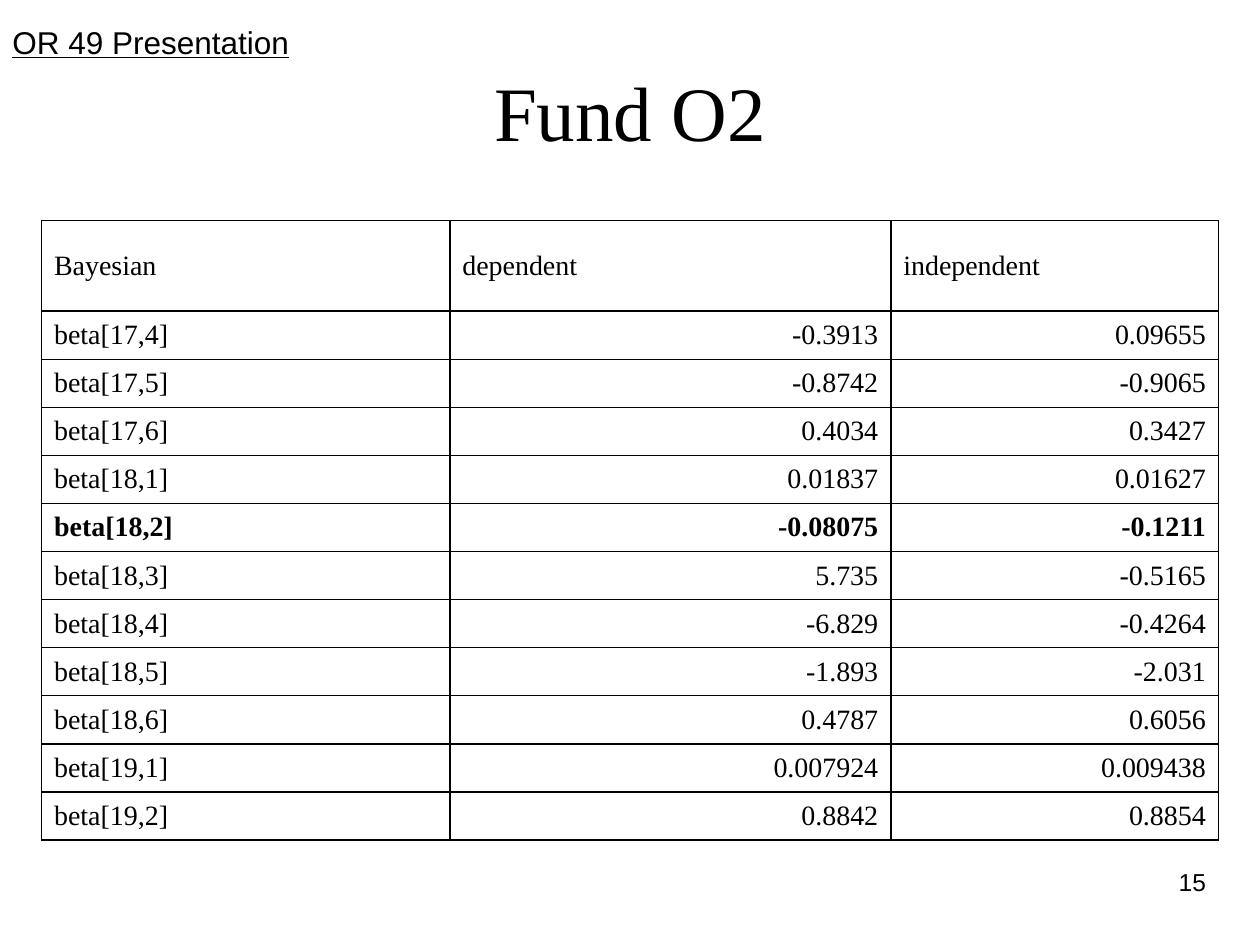
from dataclasses import dataclass

from lxml import etree
from pptx import Presentation
from pptx.dml.color import RGBColor
from pptx.enum.text import MSO_ANCHOR, PP_ALIGN
from pptx.oxml.ns import qn
from pptx.util import Inches, Pt

LEFT, CENTER, RIGHT = PP_ALIGN.LEFT, PP_ALIGN.CENTER, PP_ALIGN.RIGHT
TOP, MIDDLE = MSO_ANCHOR.TOP, MSO_ANCHOR.MIDDLE
TITLE_ONLY = 5


@dataclass(frozen=True)
class Theme:
    ink: str = "000000"
    paper: str = "FFFFFF"
    serif: str = "Times New Roman"
    sans: str = "Arial"
    title_size: int = 44
    label_size: int = 18
    table_size: int = 16
    number_size: int = 14
    border_width: float = 1


HEADINGS = ("Bayesian", "dependent", "independent")
ESTIMATES = (
    ("beta[17,4]", "-0.3913", "0.09655"),
    ("beta[17,5]", "-0.8742", "-0.9065"),
    ("beta[17,6]", "0.4034", "0.3427"),
    ("beta[18,1]", "0.01837", "0.01627"),
    ("beta[18,2]", "-0.08075", "-0.1211"),
    ("beta[18,3]", "5.735", "-0.5165"),
    ("beta[18,4]", "-6.829", "-0.4264"),
    ("beta[18,5]", "-1.893", "-2.031"),
    ("beta[18,6]", "0.4787", "0.6056"),
    ("beta[19,1]", "0.007924", "0.009438"),
    ("beta[19,2]", "0.8842", "0.8854"),
)
HIGHLIGHTED = "beta[18,2]"
COLUMN_WIDTHS = (3.24, 3.5, 2.6)
TABLE_HEIGHT = 4.92
HEADING_HEIGHT = 0.72
HANGING_INDENT = 0.38


class SlideBuilder:
    def __init__(self, presentation, theme):
        self.theme = theme
        self.slide = presentation.slides.add_slide(presentation.slide_layouts[TITLE_ONLY])
        fill = self.slide.background.fill
        fill.solid()
        fill.fore_color.rgb = RGBColor.from_string(theme.paper)

    def fill_paragraph(self, text_frame, text, alignment, **font_format):
        paragraph = text_frame.paragraphs[0]
        paragraph.alignment = alignment
        run = paragraph.add_run()
        run.text = text
        for name, value in font_format.items():
            setattr(run.font, name, value)
        run.font.color.rgb = RGBColor.from_string(self.theme.ink)
        return paragraph

    def place(self, shape, left, top, width, height):
        bounds = {"left": left, "top": top, "width": width, "height": height}
        for name, value in bounds.items():
            setattr(shape, name, Inches(value))

    def title(self, text, *bounds):
        shape = self.slide.shapes.title
        self.place(shape, *bounds)
        shape.text_frame.vertical_anchor = MIDDLE
        self.fill_paragraph(shape.text_frame, text, CENTER,
                            name=self.theme.serif, size=Pt(self.theme.title_size))

    def text(self, text, bounds, size, alignment=LEFT, underline=False):
        shape = self.slide.shapes.add_textbox(*map(Inches, bounds))
        shape.text_frame.word_wrap = True
        shape.text_frame.vertical_anchor = TOP
        self.fill_paragraph(shape.text_frame, text, alignment,
                            name=self.theme.sans, size=Pt(size), underline=underline)

    def border(self, cell):
        properties = cell._tc.get_or_add_tcPr()
        for side in ("a:lnL", "a:lnR", "a:lnT", "a:lnB"):
            line = etree.SubElement(properties, qn(side), w=str(Pt(self.theme.border_width)))
            fill = etree.SubElement(line, qn("a:solidFill"))
            etree.SubElement(fill, qn("a:srgbClr"), val=self.theme.ink)

    def cell(self, cell, text, alignment, bold):
        self.border(cell)
        cell.fill.background()
        cell.vertical_anchor = MIDDLE
        paragraph = self.fill_paragraph(cell.text_frame, text, alignment, name=self.theme.serif,
                                        size=Pt(self.theme.table_size), bold=bold)
        properties = paragraph._p.get_or_add_pPr()
        properties.set("marL", str(Inches(HANGING_INDENT)))
        properties.set("indent", str(Inches(-HANGING_INDENT)))

    def table(self, left, top):
        rows = (HEADINGS, *ESTIMATES)
        body_height = (TABLE_HEIGHT - HEADING_HEIGHT) / len(ESTIMATES)
        bounds = (left, top, sum(COLUMN_WIDTHS), TABLE_HEIGHT)
        table = self.slide.shapes.add_table(
            len(rows), len(HEADINGS), *map(Inches, bounds)).table
        table.first_row = False
        table.horz_banding = False
        for column, width in zip(table.columns, COLUMN_WIDTHS):
            column.width = Inches(width)
        for row_index, values in enumerate(rows):
            height = body_height if row_index else HEADING_HEIGHT
            table.rows[row_index].height = Inches(height)
            for column_index, value in enumerate(values):
                alignment = RIGHT if row_index and column_index else LEFT
                self.cell(table.cell(row_index, column_index), value, alignment,
                          values[0] == HIGHLIGHTED)


def main():
    presentation = Presentation()
    presentation.slide_width = Inches(10)
    presentation.slide_height = Inches(7.5)
    theme = Theme()
    builder = SlideBuilder(presentation, theme)
    builder.text("15", (7.17, 6.83, 2.5, 0.52), theme.number_size, alignment=RIGHT)
    builder.title("Fund O2", 0.33, 0.25, 9.34, 1.25)
    builder.table(0.33, 1.75)
    builder.text("OR 49 Presentation", (0, 0.13, 4.68, 0.9), theme.label_size, underline=True)
    presentation.save("out.pptx")


if __name__ == "__main__":
    main()
